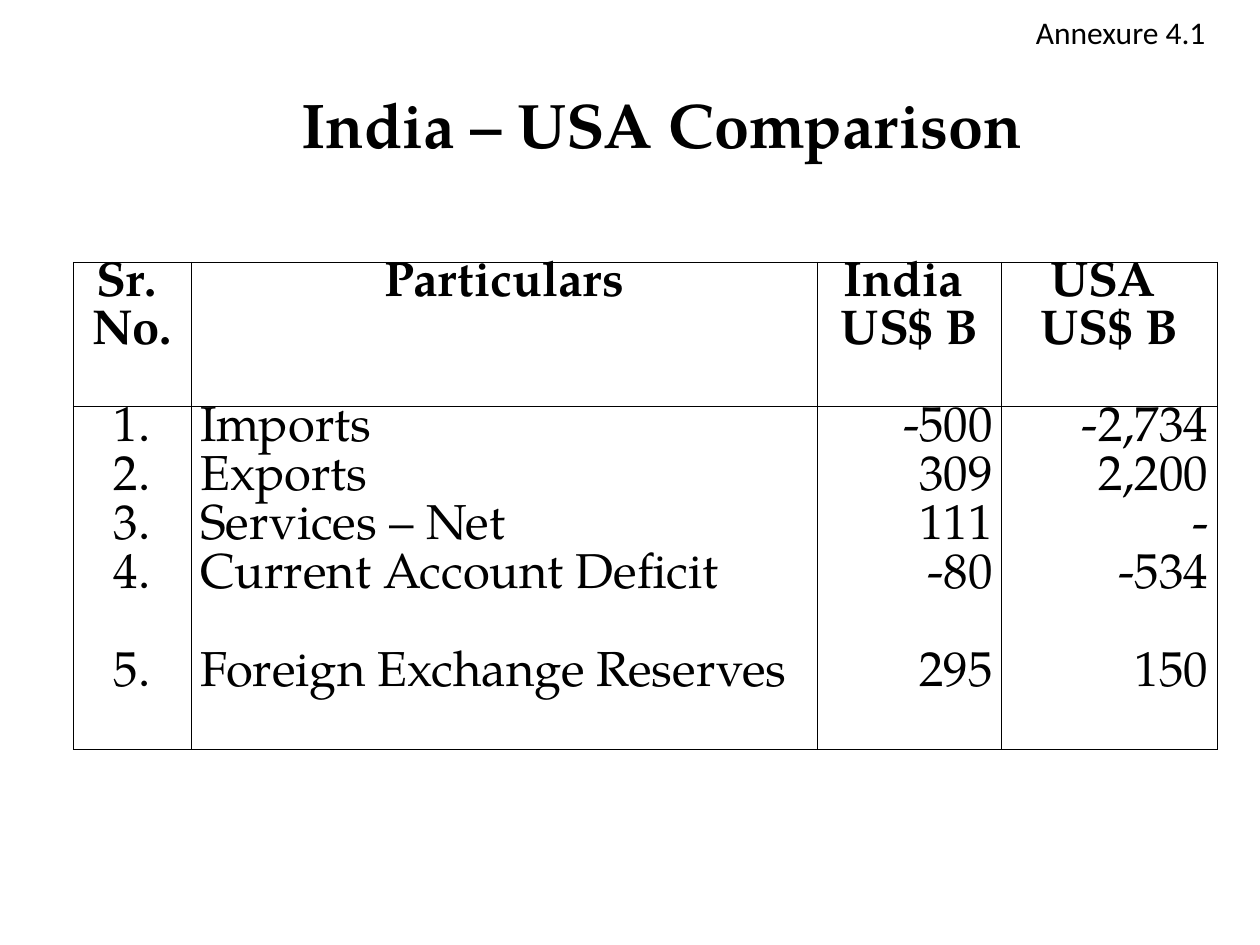
from lxml import etree
from pptx import Presentation
from pptx.dml.color import RGBColor
from pptx.enum import shapes, text
from pptx.oxml import ns
from pptx.util import Inches, Pt

SERIF = "TeX Gyre Pagella"
BLACK, WHITE = "000000", "FFFFFF"
LEFT, CENTER, RIGHT = text.PP_ALIGN.LEFT, text.PP_ALIGN.CENTER, text.PP_ALIGN.RIGHT

COLUMN_WIDTHS = [0.94, 4.97, 1.46, 1.71]
ROW_HEIGHTS = [1.14, 2.73]
HEADERS = ["Sr. \vNo.", "Particulars", "India \nUS$ B", "USA \nUS$ B"]
BODY_ALIGNMENTS = [CENTER, LEFT, RIGHT, RIGHT]
RECORDS = [
    ("1.", "Imports", "-500", "-2,734"),
    ("2.", "Exports", "309", "2,200"),
    ("3.", "Services – Net", "111", "-"),
    ("4.", "Current Account Deficit", "-80", "-534"),
    ("5.", "Foreign Exchange Reserves", "295", "150"),
]


def color(value):
    return RGBColor.from_string(value)


def set_text(text_frame, content, size, font, alignment, bold=False, spacing=None):
    text_frame.text = content
    for paragraph in text_frame.paragraphs:
        paragraph.alignment = alignment
        if spacing:
            paragraph.line_spacing = Pt(spacing)
        for run in paragraph.runs:
            run.font.size = Pt(size)
            run.font.name = font
            run.font.bold = bold
            run.font.color.rgb = color(BLACK)


def add_title(slide, content):
    box = slide.shapes.add_textbox(Inches(1), Inches(0.17), Inches(8.5), Inches(1.61))
    box.text_frame.word_wrap = True
    box.text_frame.vertical_anchor = text.MSO_ANCHOR.MIDDLE
    set_text(box.text_frame, content, 36, SERIF, CENTER, bold=True)


def add_label(slide, content):
    label = slide.shapes.add_shape(
        shapes.MSO_SHAPE.RECTANGLE, Inches(7.99), 0, Inches(1.81), Inches(0.5))
    label.shadow.inherit = False
    label.fill.solid()
    label.fill.fore_color.rgb = color(WHITE)
    label.line.color.rgb = color(WHITE)
    label.line.width = Pt(2)
    label.text_frame.vertical_anchor = text.MSO_ANCHOR.MIDDLE
    set_text(label.text_frame, content, 18, "Calibri", CENTER)


def format_cell(cell):
    """Set the margins, clear the fill and draw thin borders on all sides."""
    cell.margin_left = cell.margin_right = Inches(0.07)
    cell.margin_top = cell.margin_bottom = 0
    properties = cell._tc.get_or_add_tcPr()
    for side in ("a:lnL", "a:lnR", "a:lnT", "a:lnB"):
        border = etree.SubElement(properties, ns.qn(side), w=str(Pt(0.25)))
        fill = etree.SubElement(border, ns.qn("a:solidFill"))
        etree.SubElement(fill, ns.qn("a:srgbClr"), val=BLACK)
    cell.fill.background()


def add_comparison_table(slide):
    table = slide.shapes.add_table(
        2, len(HEADERS), Inches(0.58), Inches(2.08),
        Inches(sum(COLUMN_WIDTHS)), Inches(sum(ROW_HEIGHTS))).table
    for row, height in zip(table.rows, ROW_HEIGHTS):
        row.height = Inches(height)
    columns = zip(COLUMN_WIDTHS, HEADERS, BODY_ALIGNMENTS, zip(*RECORDS))
    for index, (width, header, alignment, values) in enumerate(columns):
        table.columns[index].width = Inches(width)
        header_cell, body_cell = table.cell(0, index), table.cell(1, index)
        format_cell(header_cell)
        format_cell(body_cell)
        set_text(header_cell.text_frame, header, 28, SERIF, CENTER, bold=True, spacing=27)
        set_text(body_cell.text_frame, "\n".join(values), 28, SERIF, alignment, spacing=28)
        body_cell.text_frame.paragraphs[-1].space_before = Pt(28)


def main():
    presentation = Presentation()
    presentation.slide_width, presentation.slide_height = Inches(10), Inches(7.5)
    slide = presentation.slides.add_slide(presentation.slide_layouts[6])
    add_title(slide, "India – USA Comparison")
    add_comparison_table(slide)
    add_label(slide, "Annexure 4.1")
    presentation.save("out.pptx")


if __name__ == "__main__":
    main()
